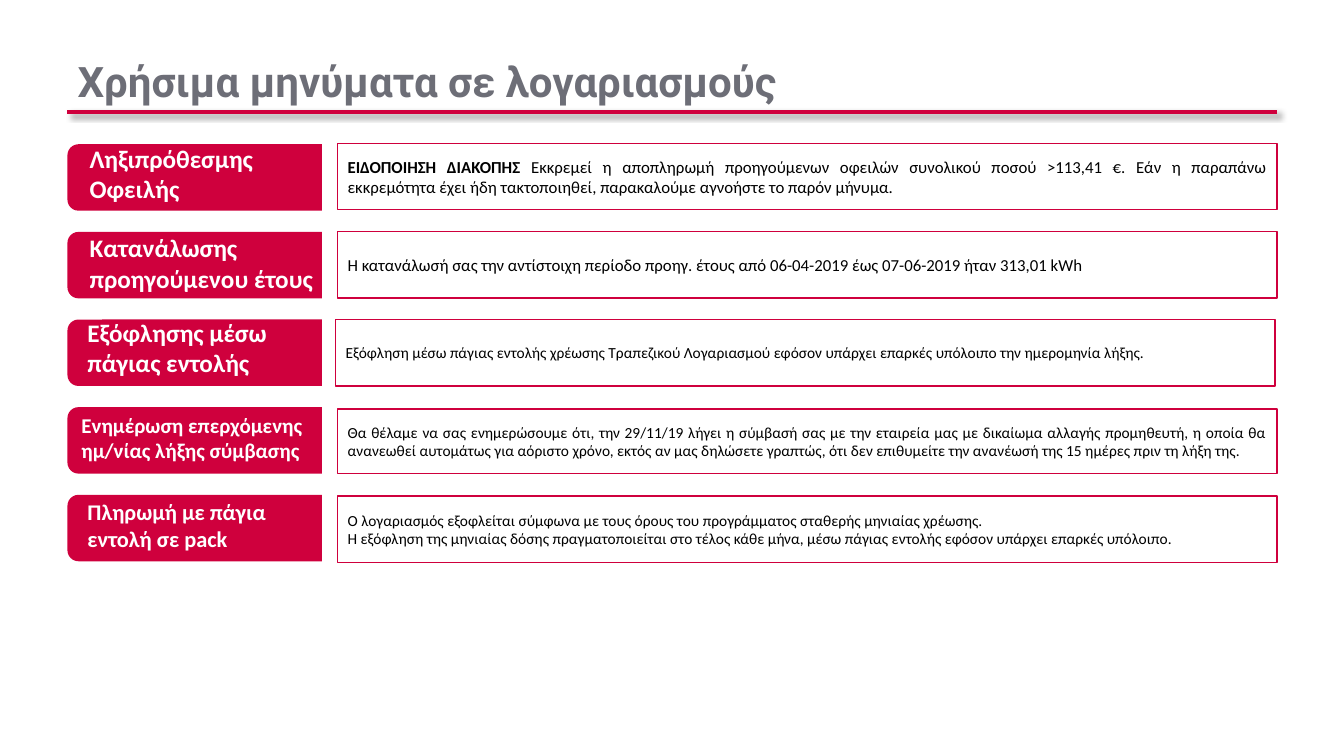
import pptx
import pptx.util
import pptx.dml.color
import pptx.enum.shapes
import pptx.enum.text
import pptx.oxml
from pptx.oxml.ns import nsdecls

Pt = pptx.util.Pt
SHAPE = pptx.enum.shapes.MSO_SHAPE
ALIGN = pptx.enum.text.PP_ALIGN
ANCHOR = pptx.enum.text.MSO_ANCHOR
FIT = pptx.enum.text.MSO_AUTO_SIZE

COLORS = {"red": "CF003D", "gray": "6D6E77", "white": "FFFFFF", "black": "000000"}
TITLE = "Χρήσιμα μηνύματα σε λογαριασμούς"

# label: text, size, left, top; message: paragraphs of (text, bold) runs, size, left, top, height
ROWS = [
    {"label": ("Ληξιπρόθεσμης Οφειλής", 18, 56.9, 98.6),
     "message": ([[("ΕΙΔΟΠΟΙΗΣΗ ΔΙΑΚΟΠΗΣ ", True),
                   ("Εκκρεμεί η αποπληρωμή προηγούμενων οφειλών συνολικού ποσού >113,41 €. "
                    "Εάν η παραπάνω εκκρεμότητα έχει ήδη τακτοποιηθεί, παρακαλούμε αγνοήστε "
                    "το παρόν μήνυμα.", False)]], 12, 241.2, 102.4, 47.5)},
    {"label": ("Κατανάλωσης προηγούμενου έτους", 18, 56.9, 162.7),
     "message": ([[("Η κατανάλωσή σας την αντίστοιχη περίοδο προηγ. έτους από 06-04-2019 "
                    "έως 07-06-2019 ήταν 313,01 kWh", False)]], 12, 241.2, 165.5, 47.5)},
    {"label": ("Εξόφλησης μέσω πάγιας εντολής", 18, 55.4, 223.2),
     "message": ([[("Εξόφληση μέσω πάγιας εντολής χρέωσης Τραπεζικού Λογαριασμού εφόσον "
                    "υπάρχει επαρκές υπόλοιπο την ημερομηνία λήξης.", False)]],
                 11, 239.8, 228.3, 47.5)},
    {"label": ("Ενημέρωση επερχόμενης ημ/νίας λήξης σύμβασης", 15, 51.1, 290.9),
     "message": ([[("Θα θέλαμε να σας ενημερώσουμε ότι, την 29/11/19 λήγει η σύμβασή σας με "
                    "την εταιρεία μας με δικαίωμα αλλαγής προμηθευτή, η οποία θα ανανεωθεί "
                    "αυτομάτως για αόριστο χρόνο, εκτός αν μας δηλώσετε γραπτώς, ότι δεν "
                    "επιθυμείτε την ανανέωσή της 15 ημέρες πριν τη λήξη της.", False)]],
                 11, 241.2, 292.3, 46.1)},
    {"label": ("Πληρωμή με πάγια εντολή σε pack", 16, 55.4, 352.1),
     "message": ([[("Ο λογαριασμός εξοφλείται σύμφωνα με τους όρους του προγράμματος "
                    "σταθερής μηνιαίας χρέωσης.", False)],
                  [("Η εξόφληση της μηνιαίας δόσης πραγματοποιείται στο τέλος κάθε μήνα, "
                    "μέσω πάγιας εντολής εφόσον υπάρχει επαρκές υπόλοιπο.", False)]],
                 11, 241.2, 354.4, 47.5)},
]

LEFT, WIDTH = 48.2, 864
TAB_TOP, TAB_STEP, TAB_WIDE, TAB_HIGH = 103, 62.6, 181.7, 47.5
LABEL_WIDE, LABEL_HIGH, BOX_WIDE = 177.8, 50, 671


def color(name):
    return pptx.dml.color.RGBColor.from_string(COLORS[name])


def write(shape, paras, size, ink="black", font="Calibri", align=ALIGN.LEFT,
          anchor=ANCHOR.TOP, fit=FIT.NONE, spacing=None):
    """Fill a shape with paragraphs, each a list of (text, bold) runs."""
    frame = shape.text_frame
    frame.word_wrap = True
    frame.auto_size = fit
    frame.vertical_anchor = anchor
    for i, runs in enumerate(paras):
        para = frame.add_paragraph() if i else frame.paragraphs[0]
        para.alignment = align
        if spacing:
            para.line_spacing = spacing
        for text, bold in runs:
            run = para.add_run()
            run.text = text
            run.font.name = font
            run.font.size = Pt(size)
            run.font.bold = bold
            run.font.color.rgb = color(ink)


def add_title(slide):
    title = slide.shapes.title
    title.left, title.top, title.width, title.height = map(Pt, (LEFT, 27.4, WIDTH, 52.6))
    write(title, [[(TITLE, True)]], 30, ink="gray", font="Roboto",
          anchor=ANCHOR.BOTTOM, spacing=0.9)


def add_rule(slide):
    rule = slide.shapes.add_connector(pptx.enum.shapes.MSO_CONNECTOR.STRAIGHT,
                                      Pt(LEFT), Pt(80), Pt(LEFT + WIDTH), Pt(80))
    rule.line.color.rgb = color("red")
    rule.line.width = Pt(2.25)
    rule._element.spPr.append(pptx.oxml.parse_xml(
        f'<a:effectLst {nsdecls("a")}>'
        f'<a:outerShdw blurRad="{Pt(4)}" dist="{Pt(3)}" dir="2700000" algn="tl" rotWithShape="0">'
        f'<a:srgbClr val="{COLORS["black"]}"><a:alpha val="40000"/></a:srgbClr>'
        '</a:outerShdw></a:effectLst>'))


def add_tab(slide, top):
    """Red label tab: an upright shape turned so its round corners face left."""
    shift = (TAB_WIDE - TAB_HIGH) / 2
    tab = slide.shapes.add_shape(SHAPE.ROUND_2_SAME_RECTANGLE, Pt(LEFT + shift),
                                 Pt(top - shift), Pt(TAB_HIGH), Pt(TAB_WIDE))
    tab.rotation = 270
    tab.shadow.inherit = False
    tab.fill.solid()
    tab.fill.fore_color.rgb = color("red")
    tab.line.fill.background()


def add_label(slide, text, size, left, top):
    label = slide.shapes.add_textbox(Pt(left), Pt(top), Pt(LABEL_WIDE), Pt(LABEL_HIGH))
    write(label, [[(text, True)]], size, ink="white", fit=FIT.SHAPE_TO_FIT_TEXT)


def add_message(slide, paras, size, left, top, high):
    box = slide.shapes.add_shape(SHAPE.RECTANGLE, Pt(left), Pt(top), Pt(BOX_WIDE), Pt(high))
    box.shadow.inherit = False
    box.fill.background()
    box.line.color.rgb = color("red")
    box.line.width = Pt(1)
    write(box, paras, size, align=ALIGN.JUSTIFY, anchor=ANCHOR.MIDDLE)


def main():
    deck = pptx.Presentation()
    deck.slide_width, deck.slide_height = Pt(960), Pt(540)
    slide = deck.slides.add_slide(deck.slide_layouts[5])
    add_rule(slide)
    add_title(slide)
    for i, row in enumerate(ROWS):
        add_message(slide, *row["message"])
        add_tab(slide, TAB_TOP + i * TAB_STEP)
        add_label(slide, *row["label"])
    deck.save("out.pptx")


if __name__ == "__main__":
    main()
